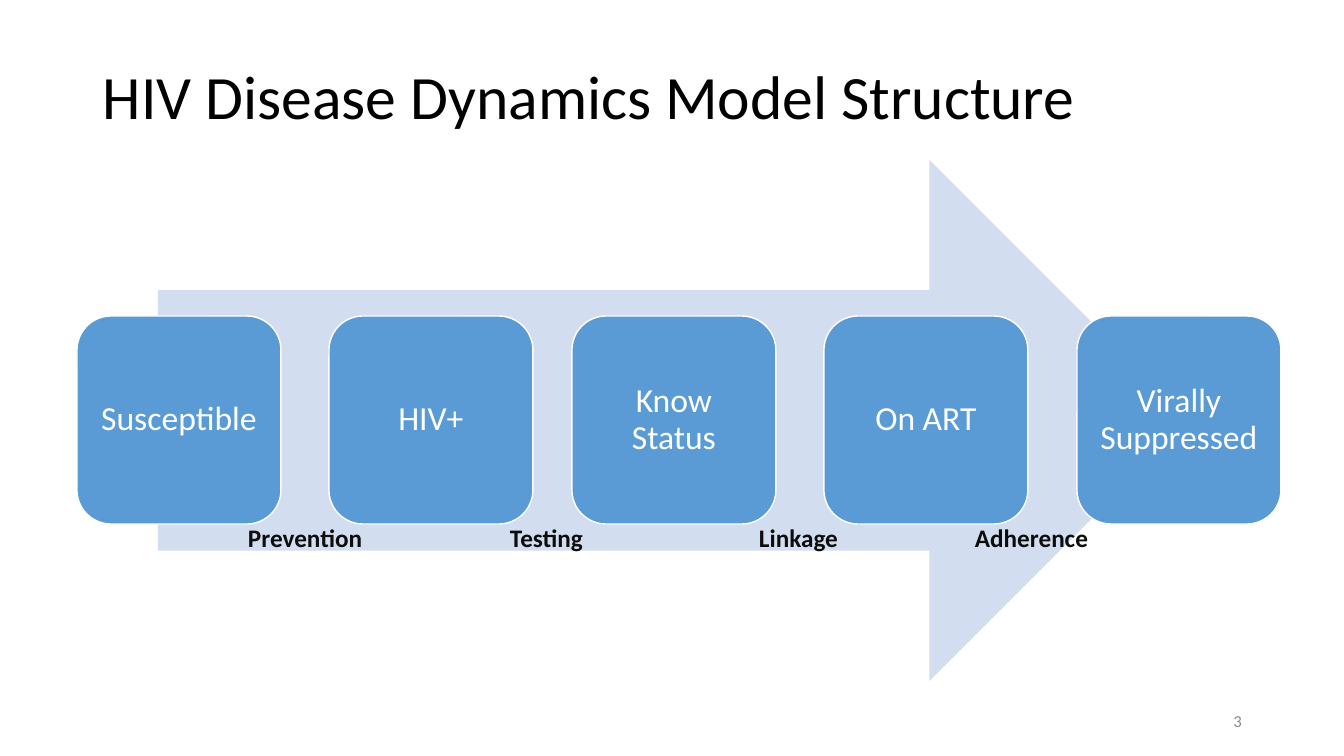
import pptx
import pptx.util
import pptx.dml.color
import pptx.enum.shapes
import pptx.enum.text
import pptx.oxml.ns
from lxml import etree

RGB = pptx.dml.color.RGBColor
BLACK = RGB(0x00, 0x00, 0x00)
WHITE = RGB(0xFF, 0xFF, 0xFF)
BLUE = RGB(0x5B, 0x9B, 0xD5)
PALE = RGB(0xD2, 0xDE, 0xEF)
DARK = RGB(0x0D, 0x0D, 0x0D)
GREY = RGB(0x8C, 0x8C, 0x8C)
SHAPE = pptx.enum.shapes.MSO_SHAPE
ALIGN = pptx.enum.text.PP_ALIGN
ANCHOR = pptx.enum.text.MSO_ANCHOR


def px(*sizes):
    return [round(size * 914400 / 100.8) for size in sizes]


def write(shape, text, size, color, bold=False, align=ALIGN.LEFT,
          anchor=ANCHOR.MIDDLE, space=1.0, inset=(10, 5), tabs=()):
    frame = shape.text_frame
    frame.word_wrap = True
    frame.auto_size = pptx.enum.text.MSO_AUTO_SIZE.NONE
    frame.vertical_anchor = anchor
    side, edge = px(*inset)
    frame.margin_left = frame.margin_right = side
    frame.margin_top = frame.margin_bottom = edge
    para = frame.paragraphs[0]
    para.alignment = align
    para.line_spacing = space
    if tabs:
        stops = etree.SubElement(para._p.get_or_add_pPr(), pptx.oxml.ns.qn("a:tabLst"))
        for stop in px(*tabs):
            etree.SubElement(stops, pptx.oxml.ns.qn("a:tab"), pos=str(stop), algn="l")
    run = para.add_run()
    run.text = text
    run.font.name = "Calibri"
    run.font.size = pptx.util.Pt(size)
    run.font.bold = bold
    run.font.color.rgb = color


deck = pptx.Presentation()
deck.slide_width, deck.slide_height = px(1344, 756)
slide = deck.slides.add_slide(deck.slide_layouts[5])

# Title
title = slide.shapes.title
title.left, title.top, title.width, title.height = px(93, 40, 1159, 120)
write(title, "HIV Disease Dynamics Model Structure", 44, BLACK, space=0.9)

# Arrow behind the stages
flow = slide.shapes.add_group_shape()
arrow = flow.shapes.add_shape(SHAPE.RIGHT_ARROW, *px(158, 160, 1032, 521))
arrow.shadow.inherit = False
arrow.fill.solid()
arrow.fill.fore_color.rgb = PALE
arrow.line.fill.background()

# Stages
stages = [("Susceptible", 77), ("HIV+", 329), ("Know Status", 572),
          ("On ART", 824), ("Virally Suppressed", 1077)]
for name, left in stages:
    stage = flow.shapes.add_shape(SHAPE.ROUNDED_RECTANGLE, *px(left, 316, 204, 208))
    stage.shadow.inherit = False
    stage.fill.solid()
    stage.fill.fore_color.rgb = BLUE
    stage.line.color.rgb = WHITE
    stage.line.width = pptx.util.Pt(1)
    write(stage, name, 24, WHITE, align=ALIGN.CENTER, space=0.9, inset=(10, 10))

# Slide number
number = slide.shapes.add_textbox(*px(950, 701, 302, 40))
write(number, "3", 12, GREY, align=ALIGN.RIGHT)

# Steps between the stages, set on tab stops
steps = ["Prevention", "Testing", "Linkage", "Adherence"]
labels = slide.shapes.add_textbox(*px(164, 517, 1063, 40))
write(labels, "".join("\t" + step for step in steps), 18, DARK, bold=True,
      anchor=ANCHOR.TOP, tabs=(74, 336, 585, 801))

deck.save("out.pptx")
